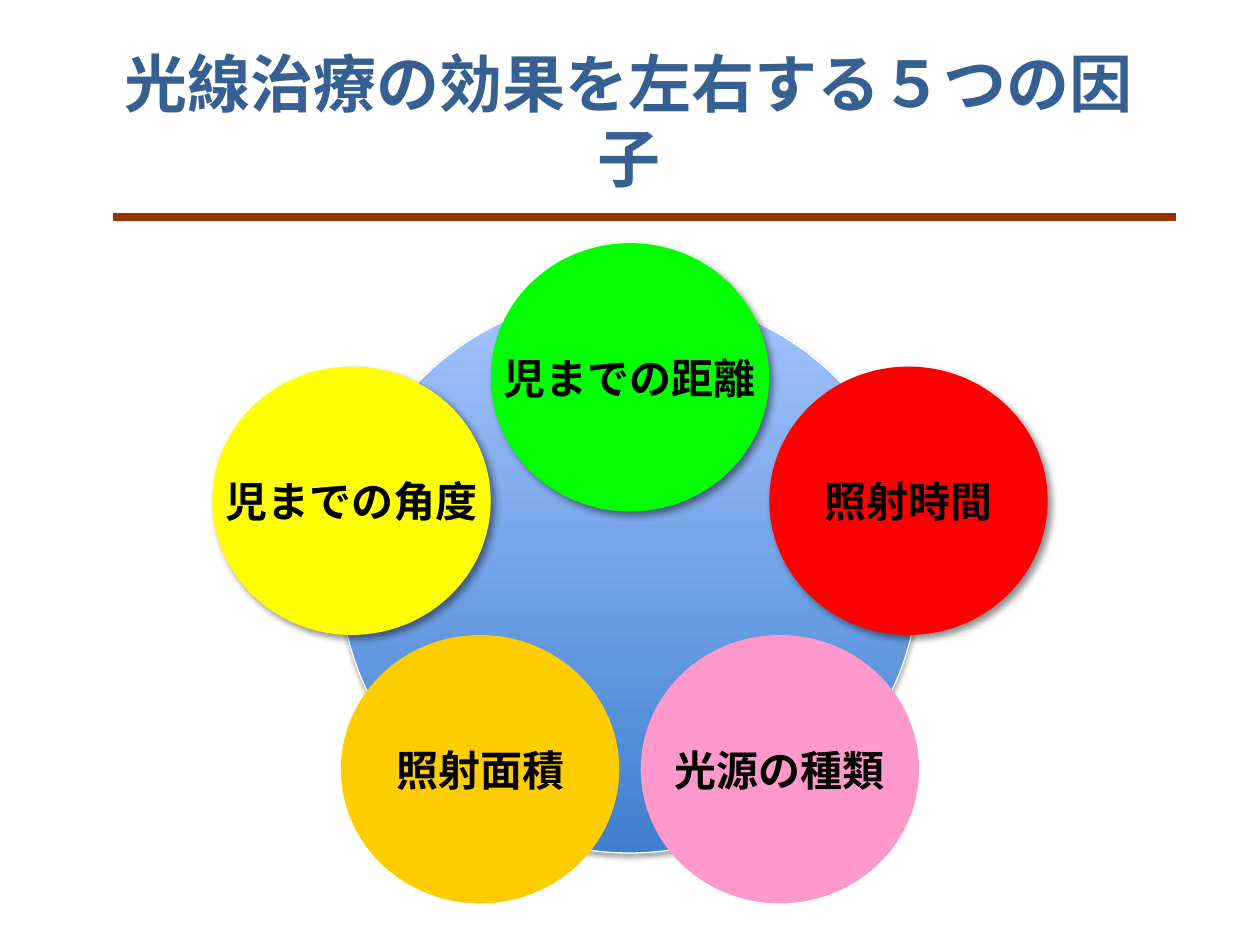
from lxml import etree
from pptx import Presentation
from pptx.dml.color import RGBColor
from pptx.enum.shapes import MSO_CONNECTOR, MSO_SHAPE
from pptx.enum.text import MSO_ANCHOR, PP_ALIGN
from pptx.oxml.ns import qn
from pptx.util import Inches, Pt

OVAL = MSO_SHAPE.OVAL
STRAIGHT = MSO_CONNECTOR.STRAIGHT
CENTER = PP_ALIGN.CENTER
MIDDLE = MSO_ANCHOR.MIDDLE

BLACK = RGBColor(0x00, 0x00, 0x00)
WHITE = RGBColor(0xFF, 0xFF, 0xFF)
TITLE_BLUE = RGBColor(0x37, 0x60, 0x92)
RULE_BROWN = RGBColor(0x99, 0x33, 0x00)
HUB_DARK = RGBColor(0x3F, 0x80, 0xCE)
HUB_LIGHT = RGBColor(0xA4, 0xC4, 0xFF)
GREEN = RGBColor(0x00, 0xFF, 0x00)
ORANGE = RGBColor(0xFF, 0xCC, 0x00)
PINK = RGBColor(0xFF, 0x99, 0xCC)
YELLOW = RGBColor(0xFF, 0xFF, 0x00)
RED = RGBColor(0xFF, 0x00, 0x00)

# Factor circles: shared size, centre axis of the ring and three rows
CIRCLE_W, CIRCLE_H = 2.21, 2.13
AXIS_X = 5.0
TOP_Y, MIDDLE_Y, BOTTOM_Y = 1.93, 2.91, 5.04
BOTTOM_OFFSET = 1.19

# Label, fill, horizontal offset of the centre from the axis, top, shadow
FACTORS = [
    ("児までの距離", GREEN, 0, TOP_Y, True),
    ("照射面積", ORANGE, -BOTTOM_OFFSET, BOTTOM_Y, False),
    ("光源の種類", PINK, BOTTOM_OFFSET, BOTTOM_Y, False),
    ("児までの角度", YELLOW, -CIRCLE_W, MIDDLE_Y, True),
    ("照射時間", RED, CIRCLE_W, MIDDLE_Y, True),
]


def write_text(frame, text, *, font, size, color, wrap):
    frame.word_wrap = wrap
    frame.vertical_anchor = MIDDLE
    paragraph = frame.paragraphs[0]
    paragraph.alignment = CENTER
    run = paragraph.add_run()
    run.text = text
    run.font.name = font
    run.font.size = Pt(size)
    run.font.bold = True
    run.font.color.rgb = color


def add_shadow(shape, *, alpha, blur, distance, angle):
    shape.shadow.inherit = False
    effects = shape.element.spPr.find(qn("a:effectLst"))
    shadow = etree.SubElement(
        effects, qn("a:outerShdw"), blurRad=str(Pt(blur)),
        dist=str(Pt(distance)), dir=str(angle * 60000), rotWithShape="0")
    color = etree.SubElement(shadow, qn("a:srgbClr"), val=str(BLACK))
    etree.SubElement(color, qn("a:alpha"), val=str(alpha * 1000))


def add_oval(slide, left, top, width, height):
    oval = slide.shapes.add_shape(
        OVAL, Inches(left), Inches(top), Inches(width), Inches(height))
    oval.shadow.inherit = False
    return oval


def add_hub(slide):
    hub = add_oval(slide, 2.7, 2.33, 4.59, 4.44)
    hub.fill.gradient()
    hub.fill.gradient_angle = 90
    for stop, color in zip(hub.fill.gradient_stops, (HUB_DARK, HUB_LIGHT)):
        stop.color.rgb = color
    hub.line.color.rgb = WHITE
    hub.line.width = Pt(0.75)
    add_shadow(hub, alpha=35, blur=3.1, distance=1.8, angle=90)


def add_title(slide, text):
    title = slide.shapes.title
    title.left, title.top = Inches(0.73), Inches(0.47)
    title.width, title.height = Inches(8.52), Inches(0.96)
    write_text(title.text_frame, text, font="Arial", size=36,
               color=TITLE_BLUE, wrap=True)


def add_rule(slide):
    rule = slide.shapes.add_connector(
        STRAIGHT, Inches(0.9), Inches(1.72), Inches(9.33), Inches(1.72))
    rule.line.color.rgb = RULE_BROWN
    rule.line.width = Pt(4.5)
    etree.SubElement(rule.element.spPr, qn("a:effectLst"))


def add_factor(slide, label, color, offset, top, shadowed):
    left = AXIS_X + offset - CIRCLE_W / 2
    circle = add_oval(slide, left, top, CIRCLE_W, CIRCLE_H)
    circle.fill.solid()
    circle.fill.fore_color.rgb = color
    circle.line.fill.background()
    if shadowed:
        add_shadow(circle, alpha=43, blur=4, distance=3, angle=45)
    write_text(circle.text_frame, label, font="Calibri", size=24,
               color=BLACK, wrap=False)


def main():
    prs = Presentation()
    prs.slide_width, prs.slide_height = Inches(10), Inches(7.5)
    slide = prs.slides.add_slide(prs.slide_layouts.get_by_name("Title Only"))

    # Heading with its underline
    add_title(slide, "光線治療の効果を左右する５つの因子")
    add_rule(slide)

    # Central disc, then the five factors around it
    add_hub(slide)
    for factor in FACTORS:
        add_factor(slide, *factor)

    prs.save("out.pptx")


if __name__ == "__main__":
    main()
